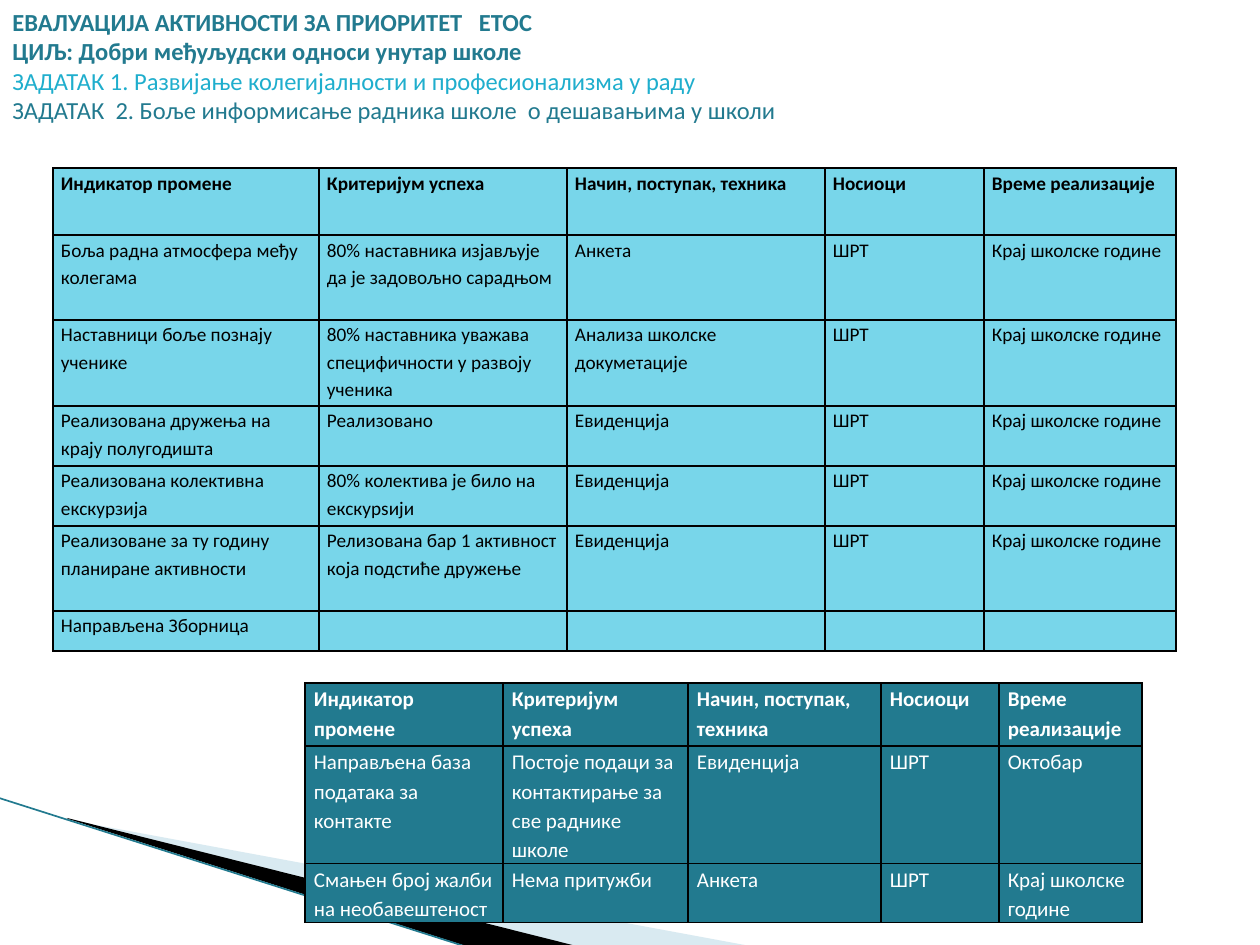
from lxml.etree import SubElement
from pptx import Presentation
from pptx.dml.color import RGBColor
from pptx.enum.shapes import MSO_CONNECTOR
from pptx.enum.text import MSO_ANCHOR
from pptx.oxml.ns import qn
from pptx.util import Emu, Pt

SCALE = 914400 / 126
FONT = "Calibri"
TEAL, CYAN, SKY = "227A8F", "1FAECD", "78D6EA"
BLACK, WHITE, PALE = "000000", "FFFFFF", "A0CBDC"
YEAR_END = "Крај школске године"

TITLE = [
    ("ЕВАЛУАЦИЈА АКТИВНОСТИ ЗА ПРИОРИТЕТ   ЕТОС", TEAL, True),
    ("ЦИЉ: Добри међуљудски односи унутар школе", TEAL, True),
    ("ЗАДАТАК 1. Развијање колегијалности и професионализма у раду", CYAN, False),
    ("ЗАДАТАК  2. Боље информисање радника школе  о дешавањима у школи", TEAL, False),
]
HEADER = ["Индикатор промене", "Критеријум успеха", "Начин, поступак, техника",
          "Носиоци", "Време реализације"]
COLLEGIALITY = [
    HEADER,
    ["Боља радна атмосфера међу колегама",
     "80% наставника изјављује да је задовољно сарадњом", "Анкета", "ШРТ", YEAR_END],
    ["Наставници боље познају ученике",
     "80% наставника уважава специфичности у развоју ученика",
     "Анализа школске докуметације", "ШРТ", YEAR_END],
    ["Реализована дружења на крају полугодишта", "Реализовано", "Евиденција", "ШРТ", YEAR_END],
    ["Реализована колективна екскурзија",
     "80% колектива је било на екскурѕији", "Евиденција", "ШРТ", YEAR_END],
    ["Реализоване за ту годину планиране активности",
     "Релизована бар 1 активност која подстиће дружење", "Евиденција", "ШРТ", YEAR_END],
    ["Направљена Зборница", "", "", "", ""],
]
INFORMING = [
    HEADER,
    ["Направљена база података за контакте",
     "Постоје подаци за контактирање за све раднике школе", "Евиденција", "ШРТ", "Октобар"],
    ["Смањен број жалби на необавештеност", "Нема притужби", "Анкета", "ШРТ", YEAR_END],
]


def px(n):
    return Emu(round(n * SCALE))


def rgb(color):
    return RGBColor.from_string(color)


def set_font(p, size, color, bold):
    p.font.name = FONT
    p.font.size = Pt(size)
    p.font.bold = bold
    p.font.color.rgb = rgb(color)


def set_frame(sp, points, left, top, width, height):
    sp.left, sp.top, sp.width, sp.height = px(left), px(top), px(width), px(height)
    outline = sp._element.spPr.find(".//" + qn("a:path"))
    outline.set("w", str(width))
    outline.set("h", str(height))
    for pt, (x, y) in zip(outline.iter(qn("a:pt")), points):
        pt.set("x", str(x - left))
        pt.set("y", str(y - top))


def add_wedge(s, points, frame, color, opacity=100):
    builder = s.shapes.build_freeform(*points[0], scale=SCALE)
    builder.add_line_segments(points[1:], close=True)
    sp = builder.convert_to_shape()
    set_frame(sp, points, *frame)
    sp.shadow.inherit = False
    sp.fill.solid()
    sp.fill.fore_color.rgb = rgb(color)
    sp.line.fill.background()
    if opacity < 100:
        clr = sp.fill._xPr.find(qn("a:solidFill"))[0]
        SubElement(clr, qn("a:alpha"), val=str(opacity * 1000))


def add_line(s, x1, y1, x2, y2, color, width):
    cx = s.shapes.add_connector(MSO_CONNECTOR.STRAIGHT, px(x1), px(y1), px(x2), px(y2))
    cx.line.color.rgb = rgb(color)
    cx.line.width = Pt(width)
    SubElement(cx._element.spPr, qn("a:effectLst"))


def add_borders(cell, color):
    tc_pr = cell._tc.get_or_add_tcPr()
    for side in ("lnL", "lnR", "lnT", "lnB"):
        ln = SubElement(tc_pr, qn(f"a:{side}"), w=str(Pt(1)))
        fill = SubElement(ln, qn("a:solidFill"))
        SubElement(fill, qn("a:srgbClr"), val=color)


def fill_cell(cell, text, inset, size, color, bold, fill):
    cell.margin_left = cell.margin_right = px(inset)
    cell.margin_top = cell.margin_bottom = 0
    add_borders(cell, BLACK)
    cell.fill.solid()
    cell.fill.fore_color.rgb = rgb(fill)
    if text:
        p = cell.text_frame.paragraphs[0]
        p.text = text
        p.line_spacing = 1.15
        set_font(p, size, color, bold)


def add_grid(s, left, top, widths, heights, rows, inset, size, color, fill):
    frame = s.shapes.add_table(len(rows), len(widths), px(left), px(top),
                               px(sum(widths)), px(sum(heights)))
    table = frame.table
    table.horz_banding = False
    for column, width in zip(table.columns, widths):
        column.width = px(width)
    for i, (height, texts) in enumerate(zip(heights, rows)):
        table.rows[i].height = px(height)
        for j, text in enumerate(texts):
            fill_cell(table.cell(i, j), text, inset, size, color, i == 0, fill)


def add_title(s, left, top, width, height, lines):
    tf = s.shapes.add_textbox(px(left), px(top), px(width), px(height)).text_frame
    tf.word_wrap = True
    tf.vertical_anchor = MSO_ANCHOR.TOP
    tf.margin_top = px(7)
    for i, (text, color, bold) in enumerate(lines):
        p = tf.add_paragraph() if i else tf.paragraphs[0]
        p.text = text
        set_font(p, 14, color, bold)


def main():
    prs = Presentation()
    prs.slide_width, prs.slide_height = px(1260), px(945)
    s = prs.slides.add_slide(prs.slide_layouts[6])
    add_wedge(s, [(69, 820), (750, 946), (575, 946), (69, 819)],
              (98, 689, 524, 199), PALE, 40)
    add_wedge(s, [(67, 818), (576, 946), (469, 947), (68, 819)],
              (-8, 798, 524, 116), BLACK)
    add_line(s, -1, 798, 467, 947, TEAL, 0.95)
    add_grid(s, 53, 168, [266, 248, 258, 159, 192], [67, 85, 86, 60, 60, 85, 40],
             COLLEGIALITY, 8, 11, BLACK, SKY)
    add_grid(s, 305, 683, [198, 185, 193, 118, 143], [63, 117, 59],
             INFORMING, 9, 12, WHITE, TEAL)
    add_title(s, 0, 0, 1260, 170, TITLE)
    prs.save("out.pptx")


if __name__ == "__main__":
    main()
